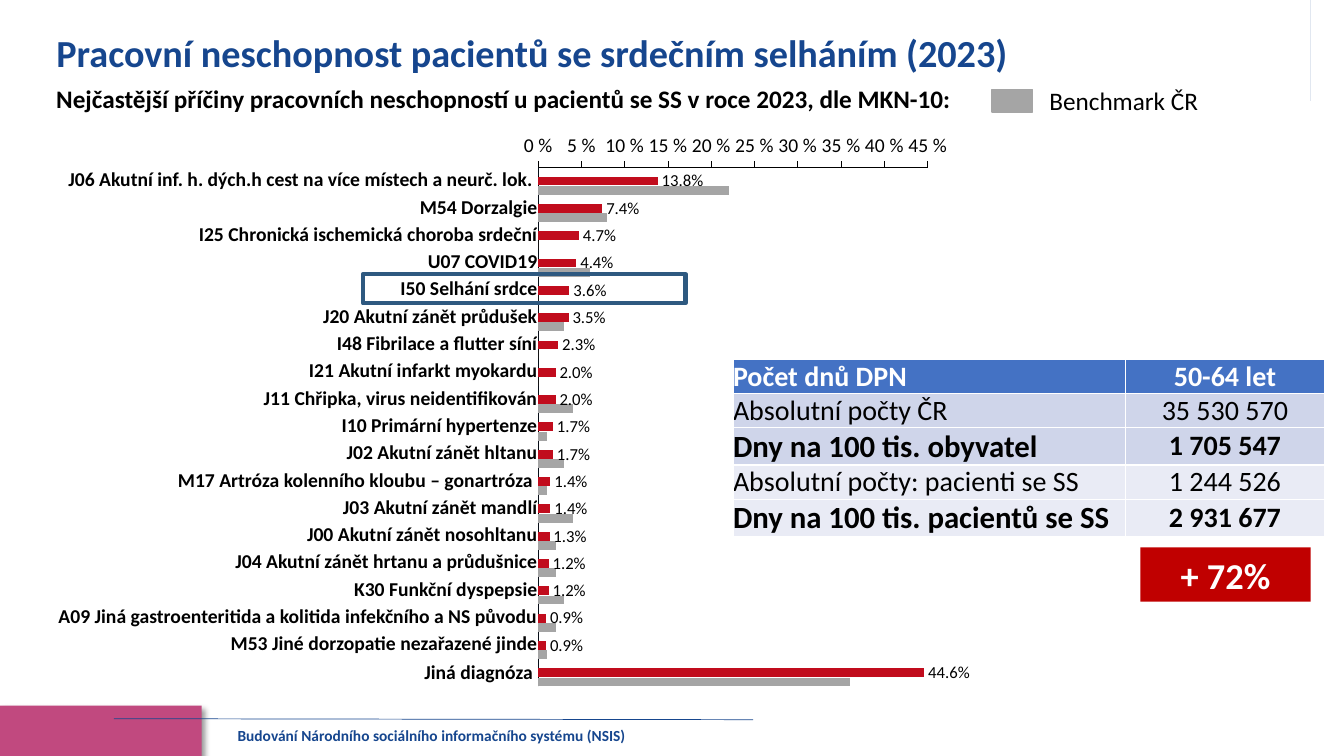
from lxml.etree import SubElement
from pptx import Presentation
from pptx.chart.data import CategoryChartData
from pptx.dml.color import RGBColor
from pptx.enum.chart import XL_CHART_TYPE, XL_LABEL_POSITION, XL_TICK_LABEL_POSITION, XL_TICK_MARK
from pptx.enum.shapes import MSO_CONNECTOR, MSO_SHAPE
from pptx.enum.text import MSO_ANCHOR, PP_ALIGN
from pptx.oxml import parse_xml
from pptx.oxml.ns import nsdecls, qn
from pptx.util import Inches, Pt

FONT = "Calibri"
NAVY = RGBColor(0x16, 0x46, 0x8E)
PINK = RGBColor(0xC1, 0x49, 0x7F)
BLUE = RGBColor(0x44, 0x72, 0xC4)
FRAME_BLUE = RGBColor(0x2E, 0x59, 0x80)
RED = RGBColor(0xC1, 0x0C, 0x1D)
DARK_RED = RGBColor(0xC0, 0x00, 0x00)
GRAY = RGBColor(0xA5, 0xA5, 0xA5)
BAND = RGBColor(0xCF, 0xD5, 0xEA)
LIGHT_BAND = RGBColor(0xE9, 0xEB, 0xF5)
BLACK = RGBColor(0, 0, 0)
WHITE = RGBColor(0xFF, 0xFF, 0xFF)

TITLE = "Pracovní neschopnost pacientů se srdečním selháním (2023)"
SUBTITLE = "Nejčastější příčiny pracovních neschopností u pacientů se SS v roce 2023, dle MKN-10:"
FOOTER = "Budování Národního sociálního informačního systému (NSIS) "
DIAGNOSES = [
    ("J06 Akutní inf. h. dých.h cest na více místech a neurč. lok. ", 0.138, 0.22),
    ("M54 Dorzalgie", 0.074, 0.08),
    ("I25 Chronická ischemická choroba srdeční", 0.047, 0),
    ("U07 COVID19", 0.044, 0.06),
    ("I50 Selhání srdce", 0.036, 0),
    ("J20 Akutní zánět průdušek", 0.035, 0.03),
    ("I48 Fibrilace a flutter síní", 0.023, 0),
    ("I21 Akutní infarkt myokardu", 0.02, 0),
    ("J11 Chřipka, virus neidentifikován", 0.02, 0.04),
    ("I10 Primární hypertenze", 0.017, 0.01),
    ("J02 Akutní zánět hltanu", 0.017, 0.03),
    ("M17 Artróza kolenního kloubu – gonartróza ", 0.014, 0.01),
    ("J03 Akutní zánět mandlí", 0.014, 0.04),
    ("J00 Akutní zánět nosohltanu", 0.013, 0.02),
    ("J04 Akutní zánět hrtanu a průdušnice", 0.012, 0.02),
    ("K30 Funkční dyspepsie", 0.012, 0.03),
    ("A09 Jiná gastroenteritida a kolitida infekčního a NS původu", 0.009, 0.02),
    ("M53 Jiné dorzopatie nezařazené jinde", 0.009, 0.01),
    ("Jiná diagnóza ", 0.446, 0.36),
]
DAYS = [
    ("Počet dnů DPN", "50-64 let", 20, True, WHITE, BLUE, 0.33),
    ("Absolutní počty ČR", "35 530 570", 20, False, BLACK, BAND, 0.34),
    ("Dny na 100 tis. obyvatel", "1 705 547", 22, True, BLACK, BAND, 0.37),
    ("Absolutní počty: pacienti se SS", "1 244 526", 20, False, BLACK, LIGHT_BAND, 0.34),
    ("Dny na 100 tis. pacientů se SS", "2 931 677", 22, True, BLACK, LIGHT_BAND, 0.37),
]
CORNERS = [
    (PINK, [(2.13, 7.5), (-0.34, 7.44), (0.08, 7.59), (0, 6.3)], (0, 7.5)),
    (NAVY, [(11.11, 0), (13.7, 0.07), (13.26, -0.1), (13.33, 1.42)], (13.33, 0)),
]
SHADOW = (
    f'<a:effectLst {nsdecls("a")}><a:outerShdw blurRad="50800" dist="38100" dir="2700000" '
    'algn="tl" rotWithShape="0"><a:srgbClr val="000000"><a:alpha val="40000"/></a:srgbClr>'
    '</a:outerShdw></a:effectLst>'
)


def style_font(font, size, color=BLACK, bold=False):
    font.name = FONT
    font.size = Pt(size)
    font.bold = bold
    font.color.rgb = color


def write(frame, text, size, color=BLACK, bold=False, align=PP_ALIGN.LEFT):
    para = frame.paragraphs[0]
    para.text = text
    para.alignment = align
    style_font(para.font, size, color, bold)


def add_text(slide, bounds, text, size, wrap=True, **style):
    box = slide.shapes.add_textbox(*map(Inches, bounds))
    box.text_frame.word_wrap = wrap
    write(box.text_frame, text, size, **style)


def add_box(slide, bounds, fill=None, line=None, width=1):
    box = slide.shapes.add_shape(MSO_SHAPE.RECTANGLE, *map(Inches, bounds))
    box.shadow.inherit = False
    if fill is None:
        box.fill.background()
    else:
        box.fill.solid()
        box.fill.fore_color.rgb = fill
    if line is None:
        box.line.fill.background()
    else:
        box.line.color.rgb = line
        box.line.width = Pt(width)
    return box


def add_corner(slide, color, curve, corner, steps=40):
    points = []
    for step in range(steps + 1):
        t = step / steps
        weights = ((1 - t) ** 3, 3 * t * (1 - t) ** 2, 3 * t * t * (1 - t), t ** 3)
        points.append(tuple(sum(w * p[axis] for w, p in zip(weights, curve)) for axis in (0, 1)))
    builder = slide.shapes.build_freeform(*points[0], scale=Inches(1))
    builder.add_line_segments(points[1:] + [corner], close=True)
    shape = builder.convert_to_shape()
    shape.fill.solid()
    shape.fill.fore_color.rgb = color
    shape.line.fill.background()
    shape._element.spPr.append(parse_xml(SHADOW))


def add_plain_table(slide, bounds, columns, heights):
    table = slide.shapes.add_table(len(heights), len(columns), *map(Inches, bounds)).table
    table.first_row = table.horz_banding = False
    for column, width in zip(table.columns, columns):
        column.width = Inches(width)
    for row, height in zip(table.rows, heights):
        row.height = Inches(height)
    for cell in table.iter_cells():
        cell.margin_left = cell.margin_right = cell.margin_top = cell.margin_bottom = 0
        cell.vertical_anchor = MSO_ANCHOR.MIDDLE
        cell.fill.background()
    return table


def add_borders(cell):
    properties = cell._tc.get_or_add_tcPr()
    for index, side in enumerate(("lnL", "lnR", "lnT", "lnB")):
        properties.insert(index, parse_xml(
            f'<a:{side} {nsdecls("a")} w="12700"><a:solidFill><a:srgbClr val="{WHITE}"/>'
            f'</a:solidFill></a:{side}>'))


def add_diagnosis_table(slide):
    row_height = 5.15 / len(DIAGNOSES)
    table = add_plain_table(slide, (0.34, 1.65, 4.99, 5.15), [4.99], [row_height] * len(DIAGNOSES))
    for index, (name, *_) in enumerate(DIAGNOSES):
        write(table.cell(index, 0).text_frame, name, 14, bold=True, align=PP_ALIGN.RIGHT)
    table.cell(len(DIAGNOSES) - 1, 0).vertical_anchor = MSO_ANCHOR.BOTTOM


def add_days_table(slide):
    table = add_plain_table(slide, (7.27, 3.57, 5.87, 1.75), [3.89, 1.98], [row[-1] for row in DAYS])
    for index, (label, count, size, bold, color, fill, _) in enumerate(DAYS):
        write(table.cell(index, 0).text_frame, label, size, color, bold)
        write(table.cell(index, 1).text_frame, count, 20, color, bold, PP_ALIGN.CENTER)
        for cell in table.rows[index].cells:
            cell.fill.solid()
            cell.fill.fore_color.rgb = fill
            add_borders(cell)


def add_diagnosis_chart(slide):
    data = CategoryChartData()
    data.categories = [str(number + 1) for number in range(len(DIAGNOSES))]
    data.add_series("Series 1", [0] * len(DIAGNOSES))
    data.add_series("Series 2", [row[1] for row in DIAGNOSES])
    data.add_series("Series 3", [row[2] for row in DIAGNOSES])
    bounds = map(Inches, (5.11, 1.21, 4.51, 5.71))
    chart = slide.shapes.add_chart(XL_CHART_TYPE.BAR_CLUSTERED, *bounds, data).chart
    chart.has_legend = chart.has_title = False
    style_font(chart.font, 14)

    plot = chart.plots[0]
    plot.vary_by_categories = False
    plot.gap_width = 0
    plot.overlap = -5
    for series, color in zip(plot.series, (BLUE, RED, GRAY)):
        series.format.fill.solid()
        series.format.fill.fore_color.rgb = color
        series.invert_if_negative = False
    labels = plot.series[1].data_labels
    labels.show_value = True
    labels.number_format = "0.0%"
    labels.number_format_is_linked = False
    labels.position = XL_LABEL_POSITION.OUTSIDE_END
    style_font(labels.font, 12)

    names, shares = chart.category_axis, chart.value_axis
    names.reverse_order = True
    names.tick_label_position = XL_TICK_LABEL_POSITION.NONE
    names.major_tick_mark = XL_TICK_MARK.NONE
    shares.minimum_scale, shares.maximum_scale, shares.major_unit = 0, 0.45, 0.05
    shares.major_tick_mark = XL_TICK_MARK.OUTSIDE
    shares.tick_labels.number_format = "0\\ %"
    shares.tick_labels.number_format_is_linked = False
    for axis in (names, shares):
        axis.has_major_gridlines = False
        axis.format.line.color.rgb = BLACK
        axis.format.line.width = Pt(0.75)

    area = chart._chartSpace.chart.plotArea
    for old in area.findall(qn("c:layout")):
        area.remove(old)
    layout = parse_xml(f'<c:layout {nsdecls("c")}><c:manualLayout/></c:layout>')
    settings = [("layoutTarget", "inner"), ("xMode", "edge"), ("yMode", "edge"),
                ("x", 0.051), ("y", 0.079), ("w", 0.86), ("h", 0.902)]
    for name, value in settings:
        SubElement(layout[0], qn(f"c:{name}")).set("val", str(value))
    area.insert(0, layout)


def main():
    deck = Presentation()
    deck.slide_width, deck.slide_height = Inches(13.33), Inches(7.5)
    slide = deck.slides.add_slide(deck.slide_layouts[5])

    for corner in CORNERS:
        add_corner(slide, *corner)
    rule = slide.shapes.add_connector(MSO_CONNECTOR.STRAIGHT, *map(Inches, (1.13, 7.13, 7.47, 7.14)))
    rule.line.color.rgb = NAVY
    rule.line.width = Pt(0.5)
    SubElement(rule._element.spPr, qn("a:effectLst"))
    add_text(slide, (1.13, 7.15, 6.34, 0.29), FOOTER, 11, color=NAVY, bold=True, align=PP_ALIGN.CENTER)

    title = slide.shapes.title
    title.left, title.top, title.width, title.height = map(Inches, (0.46, 0.2, 11.96, 0.69))
    title.text_frame.vertical_anchor = MSO_ANCHOR.MIDDLE
    write(title.text_frame, TITLE, 27.3, NAVY, True)
    title.text_frame.paragraphs[0].line_spacing = 0.9

    add_diagnosis_table(slide)
    add_diagnosis_chart(slide)
    add_text(slide, (0.46, 0.78, 9.17, 0.4), SUBTITLE, 18, wrap=False, bold=True)
    add_box(slide, (9.84, 0.89, 0.4, 0.22), GRAY, GRAY)
    add_text(slide, (10.31, 0.8, 2.11, 0.4), "Benchmark ČR", 18)
    add_box(slide, (3.6, 2.72, 3.2, 0.29), line=FRAME_BLUE, width=3)
    add_days_table(slide)
    increase = add_box(slide, (11.31, 5.43, 1.69, 0.54), DARK_RED)
    write(increase.text_frame, "+ 72%", 26, WHITE, True, PP_ALIGN.CENTER)
    deck.save("out.pptx")


if __name__ == "__main__":
    main()
